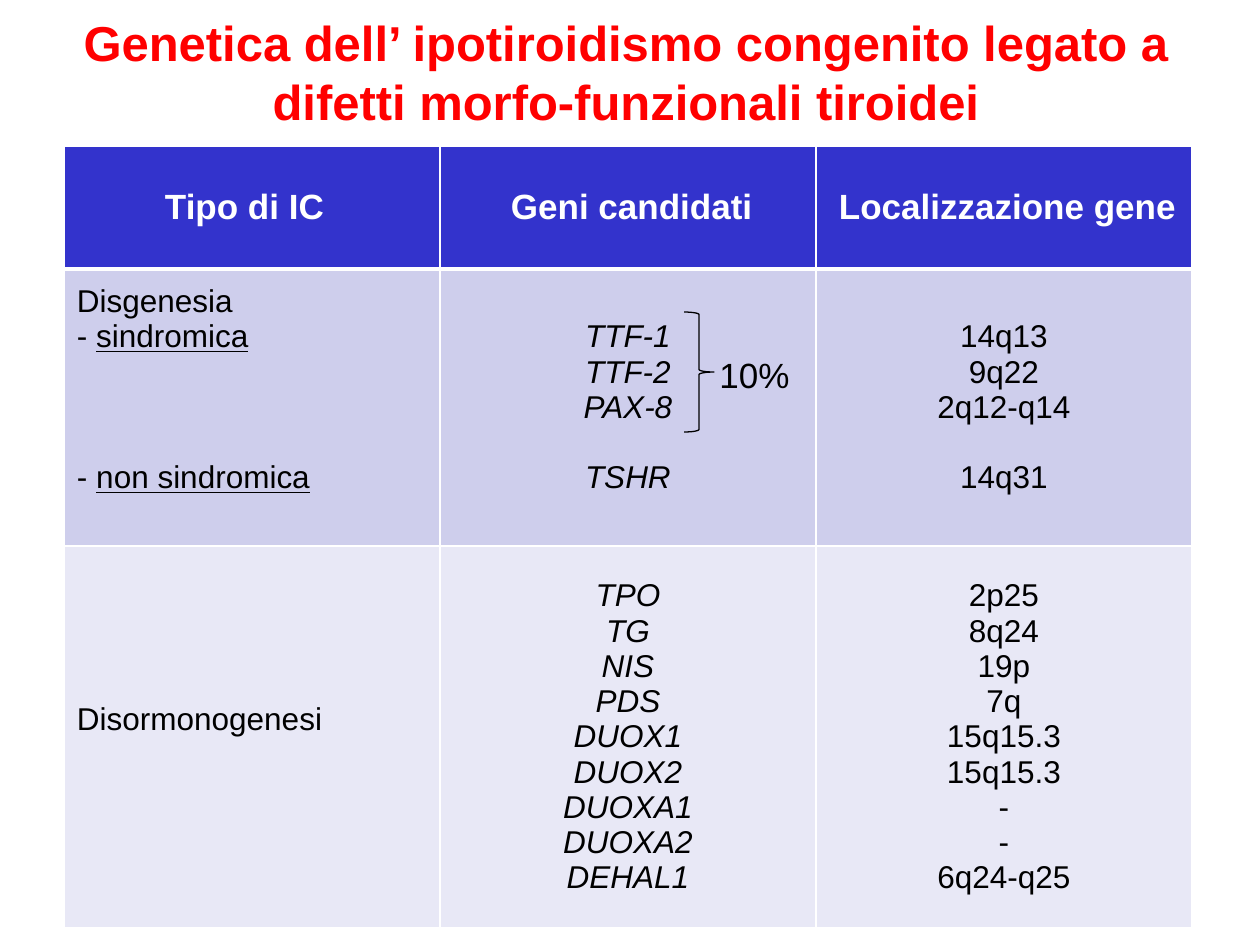
"""Build the slide on the genetics of congenital hypothyroidism."""
import pptx
import pptx.util
import pptx.dml.color
import pptx.enum.shapes
import pptx.enum.text
import pptx.oxml
import pptx.oxml.ns

ALIGN = pptx.enum.text.PP_ALIGN
MIDDLE = pptx.enum.text.MSO_ANCHOR.MIDDLE

THEME = {
    "font": "Arial", "title": "FF0000", "head": "3333CC", "light": "FFFFFF",
    "text": "000000", "rows": ("CECEEC", "E8E8F6"),
    "size": {"title": 28, "head": 20, "body": 18, "note": 20},
    "lead": {"title": 33.7, "body": 20.15},
    "edge": 1, "rule": 3, "brace": 0.75,
}
TITLE = "Genetica dell’ ipotiroidismo congenito legato a difetti morfo-funzionali tiroidei"
HEADS = [("Tipo di IC", 101), ("Geni candidati", 71), ("Localizzazione gene", 23)]
GENES = ["TPO", "TG", "NIS", "PDS", "DUOX1", "DUOX2", "DUOXA1", "DUOXA2", "DEHAL1"]
SITES = ["2p25", "8q24", "19p", "7q", "15q15.3", "15q15.3", "-", "-", "6q24-q25"]
BODY = [
    [["Disgenesia", ("- ", "sindromica"), ("- ", "non sindromica")],
     ["TTF-1", "TTF-2", "PAX-8", "TSHR"],
     ["14q13", "9q22", "2q12-q14", "14q31"]],
    [["Disormonogenesi"], GENES, SITES],
]
GAPS = {"non sindromica": 3, "TSHR": 1, "14q31": 1}
NOTE = "10%"
COL, ROWS = 376, (123, 277, 382)
LEFT, TOP = 64, 146
PAD, THIN, LINE = 13, 6, 35


def px(num):
    return pptx.util.Emu(round(num * 914400 / 126))


def rgb(code):
    return pptx.dml.color.RGBColor.from_string(code)


def write(para, text, kind, color, bold=False, slant=False, under=False):
    run = para.add_run()
    run.text = text
    font = run.font
    font.name, font.size = THEME["font"], pptx.util.Pt(THEME["size"][kind])
    font.bold, font.italic, font.underline = bold, slant, under
    font.color.rgb = rgb(color)


def border(cell, head):
    props = cell._tc.get_or_add_tcPr()
    for spot, side in enumerate(("lnL", "lnR", "lnT", "lnB")):
        wide = THEME["rule"] if head and side == "lnB" else THEME["edge"]
        space = pptx.oxml.ns.nsdecls("a")
        line = pptx.oxml.parse_xml(
            f'<a:{side} {space} w="{wide * 12700}"><a:solidFill>'
            f'<a:srgbClr val="{THEME["light"]}"/></a:solidFill></a:{side}>')
        props.insert(spot, line)


def style(cell, fill, left=PAD, low=THIN, head=False):
    cell.fill.solid()
    cell.fill.fore_color.rgb = rgb(fill)
    cell.vertical_anchor = MIDDLE
    cell.margin_left, cell.margin_right = px(left), px(PAD)
    cell.margin_top, cell.margin_bottom = px(THIN), px(low)
    border(cell, head)


def fill_cell(cell, items, col):
    for spot, item in enumerate(items):
        frame = cell.text_frame
        para = frame.add_paragraph() if spot else frame.paragraphs[0]
        para.alignment = ALIGN.CENTER if col else ALIGN.LEFT
        para.line_spacing = pptx.util.Pt(THEME["lead"]["body"])
        parts = item if isinstance(item, tuple) else (item,)
        gap = GAPS.get(parts[-1], 0)
        if gap:
            para.space_before = pptx.util.Pt(gap * THEME["lead"]["body"])
        for turn, part in enumerate(parts):
            write(para, part, "body", THEME["text"], slant=col == 1, under=turn == 1)


def add_title(slide):
    title = slide.shapes.title
    title.left, title.top, title.width, title.height = map(px, (59, -8, 1134, 158))
    title.text_frame.vertical_anchor = MIDDLE
    para = title.text_frame.paragraphs[0]
    para.alignment = ALIGN.CENTER
    para.line_spacing = pptx.util.Pt(THEME["lead"]["title"])
    write(para, TITLE, "title", THEME["title"], bold=True)


def add_grid(slide):
    box = map(px, (LEFT, TOP, COL * len(HEADS), sum(ROWS)))
    table = slide.shapes.add_table(len(ROWS), len(HEADS), *box).table
    for row, high in zip(table.rows, ROWS):
        row.height = px(high)
    for col, (text, left) in enumerate(HEADS):
        table.columns[col].width = px(COL)
        cell = table.cell(0, col)
        style(cell, THEME["head"], left=left, head=True)
        write(cell.text_frame.paragraphs[0], text, "head", THEME["light"], bold=True)
    for row, (cells, fill) in enumerate(zip(BODY, THEME["rows"]), 1):
        for col, items in enumerate(cells):
            cell = table.cell(row, col)
            style(cell, fill, low=THIN if col else THIN + LINE)
            fill_cell(cell, items, col)


def add_note(slide):
    kind = pptx.enum.shapes.MSO_SHAPE.RIGHT_BRACE
    brace = slide.shapes.add_shape(kind, *map(px, (684, 312, 30, 120)))
    brace.shadow.inherit = False
    brace.fill.background()
    brace.line.color.rgb = rgb(THEME["text"])
    brace.line.width = pptx.util.Pt(THEME["brace"])
    note = slide.shapes.add_textbox(*map(px, (707, 347, 102, 55)))
    note.text_frame.word_wrap = True
    write(note.text_frame.paragraphs[0], NOTE, "note", THEME["text"])


def main():
    deck = pptx.Presentation()
    deck.slide_width, deck.slide_height = px(1260), px(945)
    slide = deck.slides.add_slide(deck.slide_layouts[5])
    add_title(slide)
    add_grid(slide)
    add_note(slide)
    deck.save("out.pptx")


if __name__ == "__main__":
    main()
